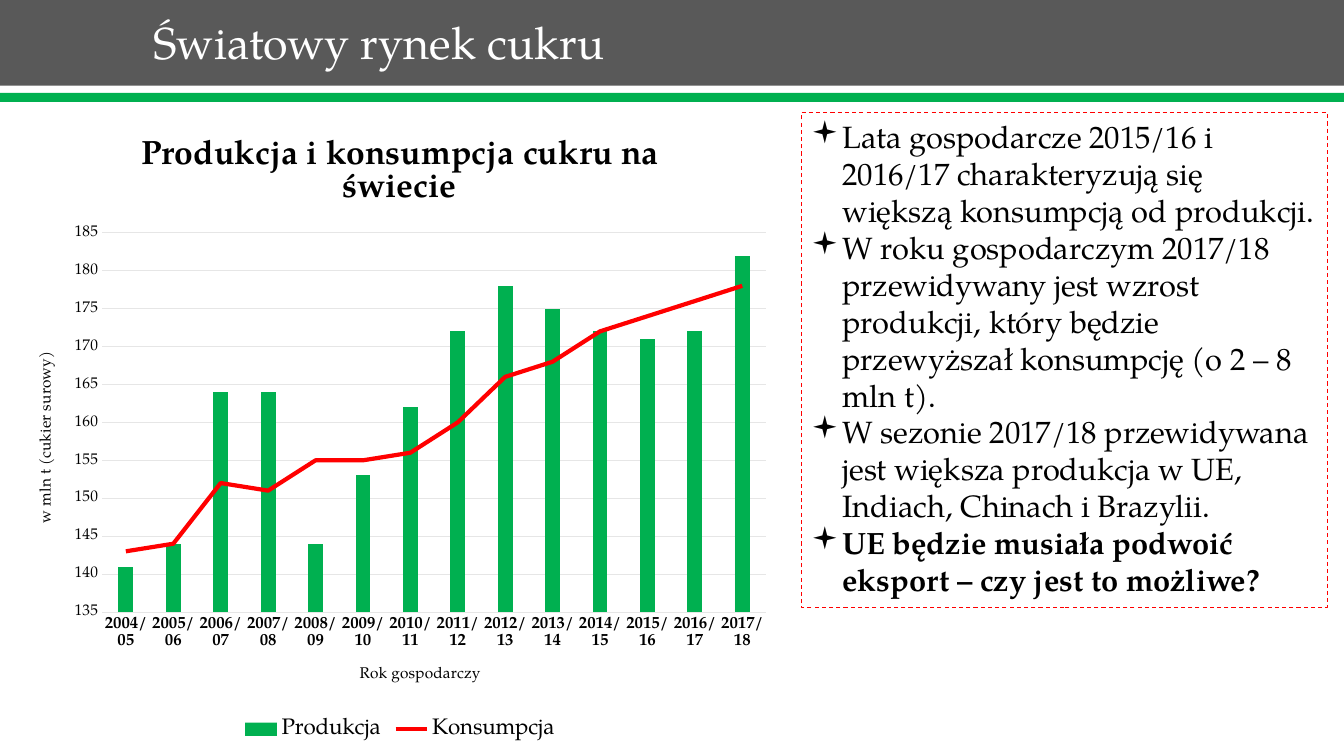
from lxml.etree import SubElement
from pptx import Presentation
from pptx.chart.data import CategoryChartData
from pptx.dml.color import RGBColor
from pptx.enum.chart import XL_CHART_TYPE, XL_LEGEND_POSITION, XL_MARKER_STYLE, XL_TICK_MARK
from pptx.enum.dml import MSO_LINE, MSO_PATTERN
from pptx.enum.shapes import MSO_SHAPE
from pptx.enum.text import MSO_ANCHOR, MSO_AUTO_SIZE, PP_ALIGN
from pptx.oxml import parse_xml
from pptx.oxml.ns import nsdecls, qn
from pptx.util import Cm, Pt

GREEN = RGBColor(0x00, 0xB0, 0x50)
RED = RGBColor(0xFF, 0x00, 0x00)
DARK = RGBColor(0x59, 0x59, 0x59)
PALE = RGBColor(0xE6, 0xE6, 0xE6)
BLACK = RGBColor(0x00, 0x00, 0x00)
WHITE = RGBColor(0xFF, 0xFF, 0xFF)
FACE = "TeX Gyre Pagella"
WIDTH = 33.87

YEARS = [f"{year}/{(year + 1) % 100:02}" for year in range(2004, 2018)]
MADE = [141, 144, 164, 164, 144, 153, 162, 172, 178, 175, 172, 171, 172, 182]
USED = [143, 144, 152, 151, 155, 155, 156, 160, 166, 168, 172, 174, 176, 178]
POINTS = [
    "Lata gospodarcze 2015/16 i 2016/17 charakteryzują się większą konsumpcją od produkcji.",
    "W roku gospodarczym 2017/18 przewidywany jest wzrost produkcji, "
    "który będzie przewyższał konsumpcję (o 2 – 8 mln t).",
    "W sezonie 2017/18 przewidywana jest większa produkcja w UE, Indiach, Chinach i Brazylii.",
    "UE będzie musiała podwoić eksport – czy jest to możliwe?",
]


class Deck:
    def __init__(self):
        self.show = Presentation()
        self.show.slide_width = Cm(WIDTH)
        self.show.slide_height = Cm(19.05)
        self.slide = self.show.slides.add_slide(self.show.slide_layouts[5])

    def style(self, font, size, color=BLACK, bold=False):
        font.name = FACE
        font.size = Pt(size)
        font.bold = bold
        font.color.rgb = color

    def rect(self, left, top, width, height):
        shape = self.slide.shapes.add_shape(
            MSO_SHAPE.RECTANGLE, Cm(left), Cm(top), Cm(width), Cm(height))
        shape.shadow.inherit = False
        return shape

    def band(self, top, height, color):
        shape = self.rect(0, top, WIDTH, height)
        shape.fill.solid()
        shape.fill.fore_color.rgb = color
        shape.line.fill.background()

    def title(self, text):
        shape = self.slide.shapes.title
        self.slide.shapes._spTree.append(shape._element)
        shape.left, shape.top = Cm(3.61), Cm(-0.99)
        shape.width, shape.height = Cm(26.67), Cm(2.87)
        frame = shape.text_frame
        frame.text = text
        frame.auto_size = MSO_AUTO_SIZE.NONE
        frame.vertical_anchor = MSO_ANCHOR.BOTTOM
        line = frame.paragraphs[0]
        line.alignment = PP_ALIGN.LEFT
        line.line_spacing = 0.9
        self.style(line.runs[0].font, 32, WHITE)

    def notes(self, texts):
        shape = self.rect(20.19, 2.84, 13.26, 12.47)
        shape.fill.background()
        shape.line.color.rgb = RED
        shape.line.width = Pt(0.75)
        shape.line.dash_style = MSO_LINE.DASH
        frame = shape.text_frame
        frame.text = "\n".join(texts)
        frame.word_wrap = True
        frame.auto_size = MSO_AUTO_SIZE.SHAPE_TO_FIT_TEXT
        frame.vertical_anchor = MSO_ANCHOR.TOP
        for line in frame.paragraphs:
            line.alignment = PP_ALIGN.LEFT
            props = line._p.get_or_add_pPr()
            props.set("marL", str(Cm(0.79)))
            props.set("indent", str(-Cm(0.79)))
            SubElement(props, qn("a:buFont")).set("typeface", "Wingdings")
            SubElement(props, qn("a:buChar")).set("char", "▪")
            self.style(line.runs[0].font, 22, bold=line.text == texts[-1])

    def label(self, owner, text, size, bold=False):
        frame = owner.text_frame
        frame.text = text
        self.style(frame.paragraphs[0].runs[0].font, size, bold=bold)
        return frame

    def axis(self, axis, text, size, bold=False):
        frame = self.label(axis.axis_title, text, 11)
        axis.major_tick_mark = axis.minor_tick_mark = XL_TICK_MARK.NONE
        self.style(axis.tick_labels.font, size, bold=bold)
        body = axis._element.find(qn("c:txPr")).find(qn("a:bodyPr"))
        body.set("rot", "-60000000")
        body.set("vert", "horz")
        return frame

    def split(self, chart):
        bars = chart.plots[0]._element
        lines = parse_xml(
            f'<c:lineChart {nsdecls("c")}><c:grouping val="standard"/>'
            '<c:varyColors val="0"/><c:marker val="1"/></c:lineChart>')
        series = bars.findall(qn("c:ser"))[1]
        for flag in series.findall(qn("c:invertIfNegative")):
            series.remove(flag)
        lines.insert(2, series)
        for ident in bars.findall(qn("c:axId")):
            SubElement(lines, qn("c:axId")).set("val", ident.get("val"))
        bars.addnext(lines)

    def place(self, chart, left, top, width, height):
        area = chart._chartSpace.chart.plotArea
        for old in area.findall(qn("c:layout")):
            area.remove(old)
        parts = zip("xywh", (left, top, width, height))
        sizes = "".join(f'<c:{name} val="{value}"/>' for name, value in parts)
        area.insert(0, parse_xml(
            f'<c:layout {nsdecls("c")}><c:manualLayout><c:layoutTarget val="inner"/>'
            f'<c:xMode val="edge"/><c:yMode val="edge"/>{sizes}'
            '</c:manualLayout></c:layout>'))

    def chart(self):
        data = CategoryChartData()
        data.categories = YEARS
        data.add_series("Produkcja", MADE)
        data.add_series("Konsumpcja", USED)
        chart = self.slide.shapes.add_chart(
            XL_CHART_TYPE.COLUMN_CLUSTERED,
            Cm(0.46), Cm(2.84), Cm(19.23), Cm(15.93), data).chart
        self.style(chart.font, 10, DARK)
        self.label(chart.chart_title, "Produkcja i konsumpcja cukru na świecie", 24, True)
        chart.chart_title.include_in_layout = False
        chart.has_legend = True
        chart.legend.position = XL_LEGEND_POSITION.BOTTOM
        chart.legend.include_in_layout = False
        self.style(chart.legend.font, 16)

        years, tons = chart.category_axis, chart.value_axis
        self.axis(years, "Rok gospodarczy", 12, True)
        frame = self.axis(tons, "w mln t (cukier surowy)", 11)
        frame._txBody.bodyPr.set("rot", "-5400000")
        frame._txBody.bodyPr.set("vert", "horz")
        tons.minimum_scale, tons.maximum_scale, tons.major_unit = 135, 185, 5
        tons.format.line.fill.background()
        for line in (years.format.line, tons.major_gridlines.format.line):
            line.color.rgb = PALE
            line.width = Pt(0.75)

        self.split(chart)
        self.place(chart, 0.11, 0.19, 0.87, 0.6)
        bars, lines = chart.plots
        bars.vary_by_categories = False
        bars.gap_width, bars.overlap = 219, -27
        made, used = bars.series[0], lines.series[0]
        made.invert_if_negative = False
        made.format.fill.solid()
        made.format.fill.fore_color.rgb = GREEN
        fill = made.points[len(MADE) - 1].format.fill
        fill.patterned()
        fill.pattern = MSO_PATTERN.DARK_HORIZONTAL
        fill.fore_color.rgb, fill.back_color.rgb = GREEN, WHITE
        used.smooth = False
        used.marker.style = XL_MARKER_STYLE.NONE
        used.format.line.color.rgb = RED
        used.format.line.width = Pt(3)


def main():
    deck = Deck()
    deck.band(0, 2.16, DARK)
    deck.band(2.34, 0.23, GREEN)
    deck.title("Światowy rynek cukru")
    deck.notes(POINTS)
    deck.chart()
    deck.show.save("out.pptx")


if __name__ == "__main__":
    main()
